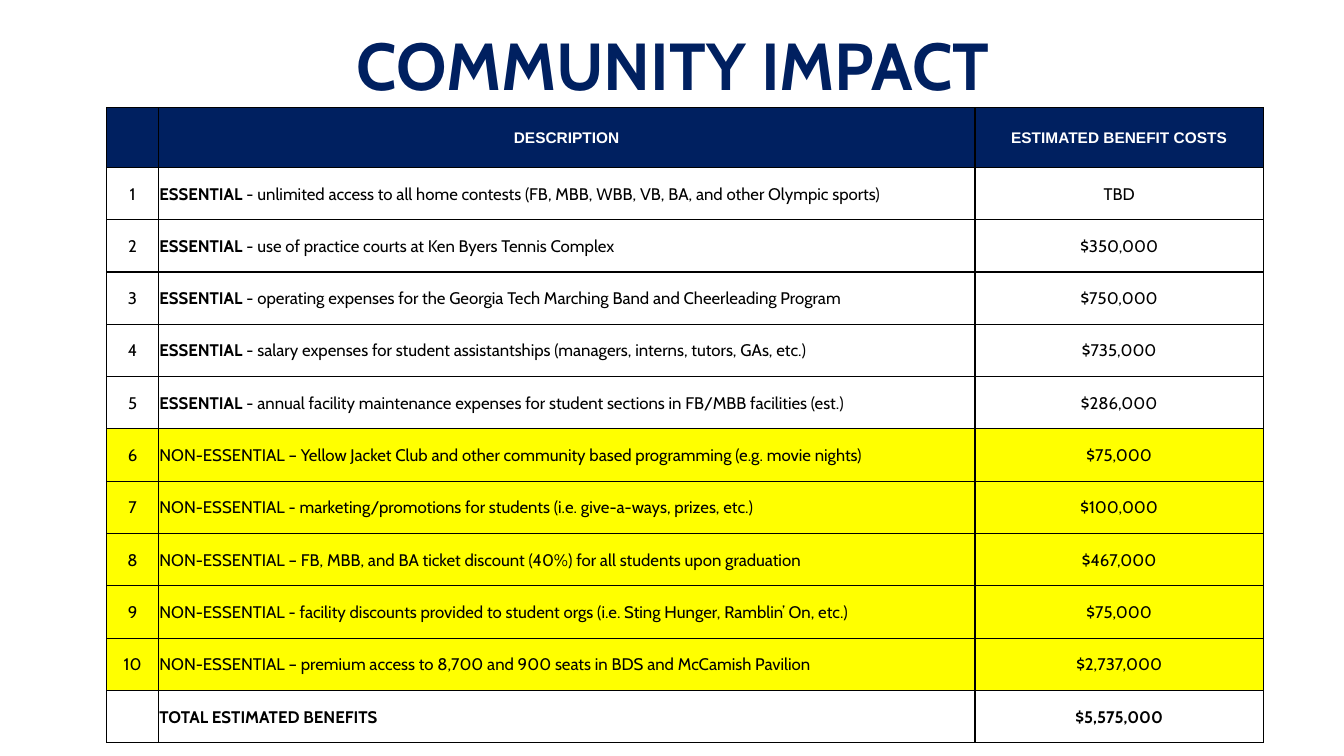
from dataclasses import dataclass

import pptx
import pptx.dml.color
import pptx.enum.text
import pptx.oxml
import pptx.oxml.ns
import pptx.table
import pptx.text.text
import pptx.util

RGBColor = pptx.dml.color.RGBColor
PP_ALIGN = pptx.enum.text.PP_ALIGN
MIDDLE = pptx.enum.text.MSO_ANCHOR.MIDDLE
Pt = pptx.util.Pt

NAVY = RGBColor(0x00, 0x20, 0x60)
WHITE = RGBColor(0xFF, 0xFF, 0xFF)
BLACK = RGBColor(0x00, 0x00, 0x00)
YELLOW = RGBColor(0xFF, 0xFF, 0x00)

SLIDE_W = pptx.util.Inches(13.33)
SLIDE_H = pptx.util.Inches(7.5)
COL_PERCENTS = (3.83, 60.77, 21.46)
HEADER_PERCENT = 7.87
ROW_PERCENT = 6.92

TITLE_FONT = {"name": "Cabin", "size": Pt(47.4), "bold": True}
HEADER_FONT = {"name": "Arial", "size": Pt(11), "bold": True}
BODY_FONT = {"name": "Cabin", "size": Pt(12), "bold": False}
BOLD_FONT = {**BODY_FONT, "bold": True}
CELL_FORMAT = {
    "vertical_anchor": MIDDLE,
    "margin_left": pptx.util.Inches(0.01),
    "margin_top": pptx.util.Inches(0.01),
    "margin_right": pptx.util.Inches(0.01),
    "margin_bottom": 0,
}


@dataclass(frozen=True)
class Span:
    text: str
    font: dict
    color: RGBColor = BLACK


@dataclass(frozen=True)
class Benefit:
    detail: str
    cost: str
    essential: bool = False

    @property
    def fill(self) -> RGBColor:
        return WHITE if self.essential else YELLOW

    @property
    def spans(self) -> list[Span]:
        if self.essential:
            return [Span("ESSENTIAL", BOLD_FONT), Span(f" {self.detail}", BODY_FONT)]
        return [Span(f"NON-ESSENTIAL {self.detail}", BODY_FONT)]


BENEFITS = (
    Benefit("- unlimited access to all home contests (FB, MBB, WBB, VB, BA, and other Olympic sports)", "TBD", True),
    Benefit("- use of practice courts at Ken Byers Tennis Complex", "$350,000", True),
    Benefit("- operating expenses for the Georgia Tech Marching Band and Cheerleading Program", "$750,000", True),
    Benefit("- salary expenses for student assistantships (managers, interns, tutors, GAs, etc.)", "$735,000", True),
    Benefit("- annual facility maintenance expenses for student sections in FB/MBB facilities (est.)", "$286,000", True),
    Benefit("– Yellow Jacket Club and other community based programming (e.g. movie nights)", "$75,000"),
    Benefit("- marketing/promotions for students (i.e. give-a-ways, prizes, etc.)", "$100,000"),
    Benefit("– FB, MBB, and BA ticket discount (40%) for all students upon graduation", "$467,000"),
    Benefit("- facility discounts provided to student orgs (i.e. Sting Hunger, Ramblin’ On, etc.)", "$75,000"),
    Benefit("– premium access to 8,700 and 900 seats in BDS and McCamish Pavilion", "$2,737,000"),
)


def across(percent: float) -> int:
    return round(SLIDE_W * percent / 100)


def down(percent: float) -> int:
    return round(SLIDE_H * percent / 100)


def apply(target: object, values: dict) -> None:
    for name, value in values.items():
        setattr(target, name, value)


def add_spans(p: pptx.text.text._Paragraph, spans: list[Span]) -> None:
    for span in spans:
        r = p.add_run()
        r.text = span.text
        apply(r.font, span.font)
        r.font.color.rgb = span.color


def add_borders(cell: pptx.table._Cell) -> None:
    tc_pr = cell._tc.get_or_add_tcPr()
    for index, side in enumerate(("lnL", "lnR", "lnT", "lnB")):
        line = pptx.oxml.parse_xml(
            f'<a:{side} {pptx.oxml.ns.nsdecls("a")} w="{Pt(1)}">'
            f'<a:solidFill><a:srgbClr val="{BLACK}"/></a:solidFill></a:{side}>'
        )
        tc_pr.insert(index, line)


def fill_row(table: pptx.table.Table, row: int, fill: RGBColor,
             columns: list[list[Span]], description_align: PP_ALIGN) -> None:
    aligns = (PP_ALIGN.CENTER, description_align, PP_ALIGN.CENTER)
    for col, (spans, align) in enumerate(zip(columns, aligns)):
        cell = table.cell(row, col)
        apply(cell, CELL_FORMAT)
        cell.fill.solid()
        cell.fill.fore_color.rgb = fill
        add_borders(cell)
        p = cell.text_frame.paragraphs[0]
        p.alignment = align
        add_spans(p, spans)


def add_title(s: pptx.slide.Slide) -> None:
    sp = s.shapes.title
    apply(sp, {"left": across(16.35), "top": down(4),
               "width": across(67.44), "height": down(10.27)})
    tf = sp.text_frame
    apply(tf, {"vertical_anchor": MIDDLE, "word_wrap": True,
               "auto_size": pptx.enum.text.MSO_AUTO_SIZE.NONE})
    p = tf.paragraphs[0]
    apply(p, {"alignment": PP_ALIGN.CENTER, "line_spacing": 0.9})
    add_spans(p, [Span("COMMUNITY IMPACT", TITLE_FONT, NAVY)])


def add_benefits(s: pptx.slide.Slide) -> None:
    row_percents = [HEADER_PERCENT] + [ROW_PERCENT] * (len(BENEFITS) + 1)
    table = s.shapes.add_table(
        len(row_percents), len(COL_PERCENTS), across(7.95), down(14.27),
        across(sum(COL_PERCENTS)), down(sum(row_percents)),
    ).table
    apply(table, {"first_row": False, "horz_banding": False})
    for column, percent in zip(table.columns, COL_PERCENTS):
        column.width = across(percent)
    for row, percent in zip(table.rows, row_percents):
        row.height = down(percent)

    header = [[], [Span("DESCRIPTION", HEADER_FONT, WHITE)],
              [Span("ESTIMATED BENEFIT COSTS", HEADER_FONT, WHITE)]]
    fill_row(table, 0, NAVY, header, PP_ALIGN.CENTER)
    for number, benefit in enumerate(BENEFITS, start=1):
        columns = [[Span(str(number), BODY_FONT)], benefit.spans,
                   [Span(benefit.cost, BODY_FONT)]]
        fill_row(table, number, benefit.fill, columns, PP_ALIGN.LEFT)
    total = [[], [Span("TOTAL ESTIMATED BENEFITS", BOLD_FONT)],
             [Span("$5,575,000", BOLD_FONT)]]
    fill_row(table, len(BENEFITS) + 1, WHITE, total, PP_ALIGN.LEFT)


def main() -> None:
    prs = pptx.Presentation()
    apply(prs, {"slide_width": SLIDE_W, "slide_height": SLIDE_H})
    s = prs.slides.add_slide(prs.slide_layouts.get_by_name("Title Only"))
    add_title(s)
    add_benefits(s)
    prs.save("out.pptx")


if __name__ == "__main__":
    main()
